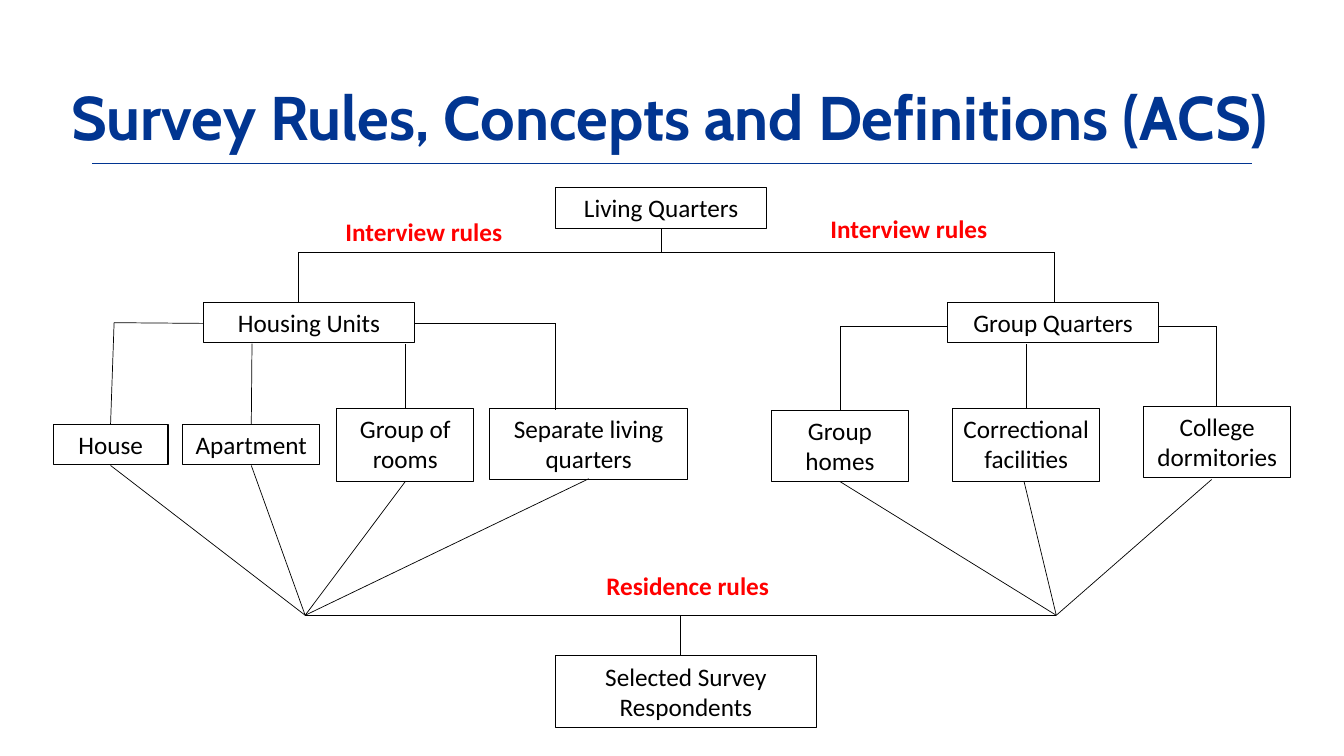
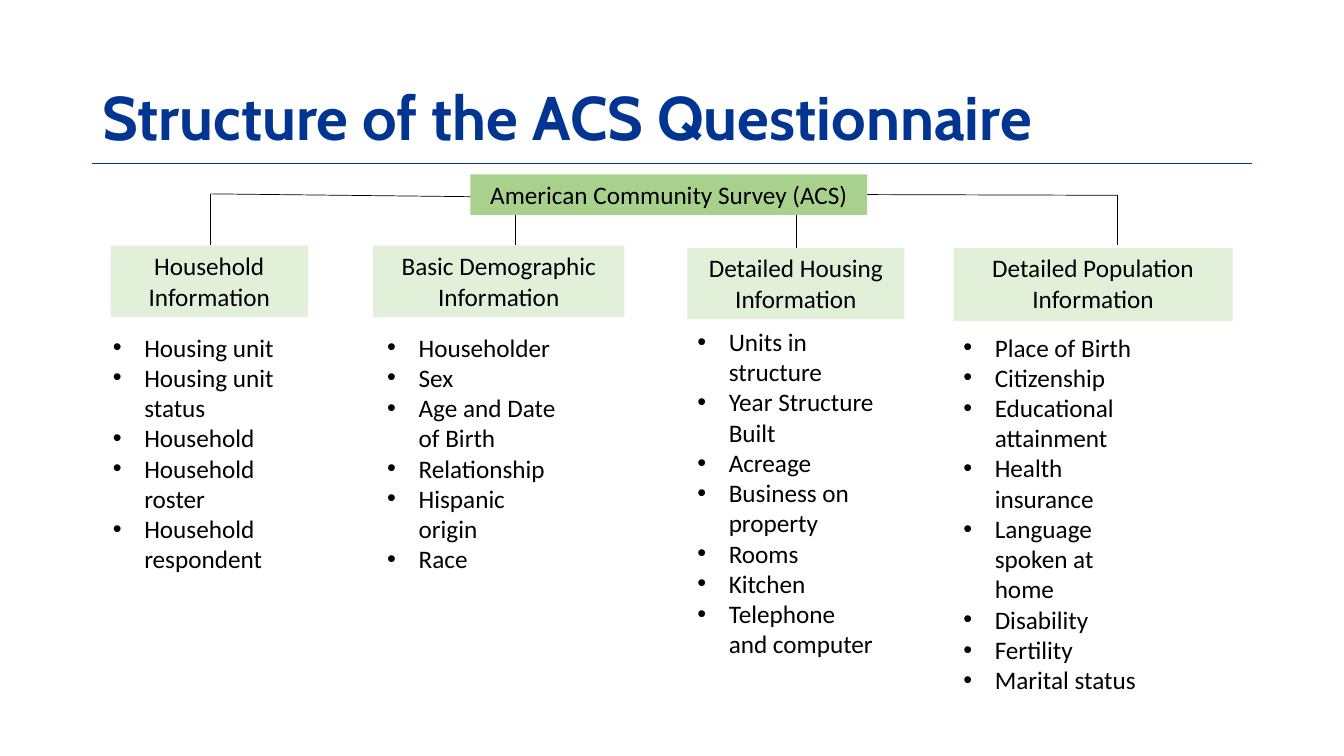
"""Build two slides on survey rules and the structure of a questionnaire."""
from itertools import pairwise

from lxml.etree import SubElement
from pptx import Presentation
from pptx.dml.color import RGBColor
from pptx.enum.shapes import MSO_CONNECTOR, MSO_SHAPE
from pptx.enum.text import MSO_ANCHOR, PP_ALIGN
from pptx.oxml.ns import qn
from pptx.util import Pt

NAVY, BLACK, RED = "013591", "000000", "FF0000"
GREEN, PALE_GREEN = "A9D18E", "E2F0D9"
ONE_LINE, TWO_LINES = 29, 51


def rgb(code):
    return RGBColor.from_string(code)


def write_text(frame, text, *, size=18, font="Calibri", color=BLACK, bold=False,
               align=PP_ALIGN.CENTER, anchor=MSO_ANCHOR.TOP, spacing=1.0, indent=0):
    frame.word_wrap = True
    frame.vertical_anchor = anchor
    for number, line in enumerate(text.split("\n")):
        paragraph = frame.add_paragraph() if number else frame.paragraphs[0]
        paragraph.alignment = align
        paragraph.line_spacing = spacing
        if indent:
            properties = paragraph._p.get_or_add_pPr()
            properties.set("marL", str(Pt(indent)))
            properties.set("indent", str(-Pt(indent)))
            SubElement(properties, qn("a:buFont")).set("typeface", "Arial")
            SubElement(properties, qn("a:buChar")).set("char", "•")
        run = paragraph.add_run()
        run.text = line
        run.font.size = Pt(size)
        run.font.name = font
        run.font.bold = bold
        run.font.color.rgb = rgb(color)


class Deck:
    def __init__(self):
        self.show = Presentation()
        self.show.slide_width, self.show.slide_height = Pt(960), Pt(540)
        self.slide = None

    def start(self, title, left, width, align):
        self.slide = self.show.slides.add_slide(self.show.slide_layouts[6])
        self.wire((66, 117), (894, 117), color=NAVY, weight=1)
        self.label(title, left, 14.5, width, 99, size=44, font="Cabin", color=NAVY,
                   bold=True, align=align, anchor=MSO_ANCHOR.BOTTOM, spacing=0.9)

    def label(self, text, left, top, width, height=ONE_LINE, **style):
        area = self.slide.shapes.add_textbox(Pt(left), Pt(top), Pt(width), Pt(height))
        write_text(area.text_frame, text, **style)

    def box(self, text, left, top, width, height, fill=None):
        node = self.slide.shapes.add_shape(
            MSO_SHAPE.RECTANGLE, Pt(left), Pt(top), Pt(width), Pt(height))
        node.shadow.inherit = False
        if fill:
            node.fill.solid()
            node.fill.fore_color.rgb = rgb(fill)
            node.line.fill.background()
        else:
            node.fill.background()
            node.line.color.rgb = rgb(BLACK)
            node.line.width = Pt(0.75)
        write_text(node.text_frame, text)

    def bullets(self, items, left, top, width, height):
        self.label("\n".join(items), left, top, width, height,
                   align=PP_ALIGN.LEFT, indent=22.5)

    def wire(self, *points, color=BLACK, weight=0.5):
        for start, end in pairwise(points):
            segment = self.slide.shapes.add_connector(
                MSO_CONNECTOR.STRAIGHT, *(Pt(value) for value in start + end))
            segment.line.color.rgb = rgb(color)
            segment.line.width = Pt(weight)
            SubElement(segment._element.spPr, qn("a:effectLst"))


def survey_rules(deck):
    deck.start("Survey Rules, Concepts and Definitions (ACS)", 30, 897, PP_ALIGN.CENTER)
    for node in (
        ("Living Quarters", 397, 134, 150.5, ONE_LINE),
        ("Housing Units", 145.5, 216, 150.5, ONE_LINE),
        ("Group Quarters", 677, 216, 150.5, ONE_LINE),
        ("House", 38, 303, 82, ONE_LINE),
        ("Apartment", 130.5, 303, 98, ONE_LINE),
        ("Group of rooms", 240.5, 291.5, 98, 52.5),
        ("Separate living quarters", 350, 291.5, 141, TWO_LINES),
        ("Group homes", 551, 293, 98, TWO_LINES),
        ("Correctional facilities", 680.5, 291.5, 105, 52.5),
        ("College dormitories", 817, 290, 105, TWO_LINES),
        ("Selected Survey Respondents", 397, 468.5, 186, TWO_LINES),
    ):
        deck.box(*node)
    for rule, left, top in (("Interview rules", 227.5, 151),
                            ("Interview rules", 574, 149),
                            ("Residence rules", 416, 404)):
        deck.label(rule, left, top, 150.5, color=RED, bold=True)

    housing_hub, group_hub = (218, 439.5), (754.5, 439.5)
    for route in (
        ((472.5, 163), (472.5, 180)),
        ((213, 216), (213, 180), (753, 180), (753, 216)),
        ((145.5, 231), (81.5, 230.5), (79, 303)),
        ((180, 245.5), (179.5, 303)),
        ((289.5, 246), (289.5, 291.5)),
        ((296, 231), (397, 231), (397, 293)),
        ((677, 233), (600, 233), (600, 293)),
        ((733, 246), (733, 291.5)),
        ((827.5, 233), (868.5, 233), (868.5, 290)),
        (housing_hub, group_hub),
        ((486, 440), (486, 468.5)),
    ):
        deck.wire(*route)
    for hub, leaves in (
        (housing_hub, ((79, 332.5), (179.5, 332.5), (289.5, 344), (420.5, 342))),
        (group_hub, ((600, 344), (731.5, 344), (865.5, 342.5))),
    ):
        for leaf in leaves:
            deck.wire(leaf, hub)


def questionnaire(deck):
    deck.start("Structure of the ACS Questionnaire", 66, 828, PP_ALIGN.LEFT)
    deck.box("American Community Survey (ACS)", 336, 124.5, 283.5, ONE_LINE, GREEN)
    for heading, heading_place, items, list_place in (
        ("Household Information", (79, 175.5, 141, TWO_LINES),
         ("Housing unit", "Housing unit status", "Household", "Household roster",
          "Household respondent"), (73.5, 233.5, 141, 181)),
        ("Basic Demographic Information", (266.5, 175.5, 179.5, TWO_LINES),
         ("Householder", "Sex", "Age and Date of Birth", "Relationship",
          "Hispanic origin", "Race"), (269.5, 233.5, 141, 181)),
        ("Detailed Housing Information", (491, 177, 155, TWO_LINES),
         ("Units in structure", "Year Structure Built", "Acreage",
          "Business on property", "Rooms", "Kitchen", "Telephone and computer"),
         (491, 229.5, 141, 247)),
        ("Detailed Population Information", (681, 177, 199.5, 52.5),
         ("Place of Birth", "Citizenship", "Educational attainment",
          "Health insurance", "Language spoken at home", "Disability", "Fertility",
          "Marital status"), (681, 233.5, 141, 269)),
    ):
        deck.box(heading, *heading_place, PALE_GREEN)
        deck.bullets(items, *list_place)
    for route in (
        ((336, 140.5), (150.5, 138.5), (150.5, 175)),
        ((368, 153.5), (368, 175)),
        ((569, 153.5), (569, 177)),
        ((619.5, 139), (798, 139.5), (798, 175)),
    ):
        deck.wire(*route)


def main():
    deck = Deck()
    survey_rules(deck)
    questionnaire(deck)
    deck.show.save("out.pptx")


if __name__ == "__main__":
    main()
